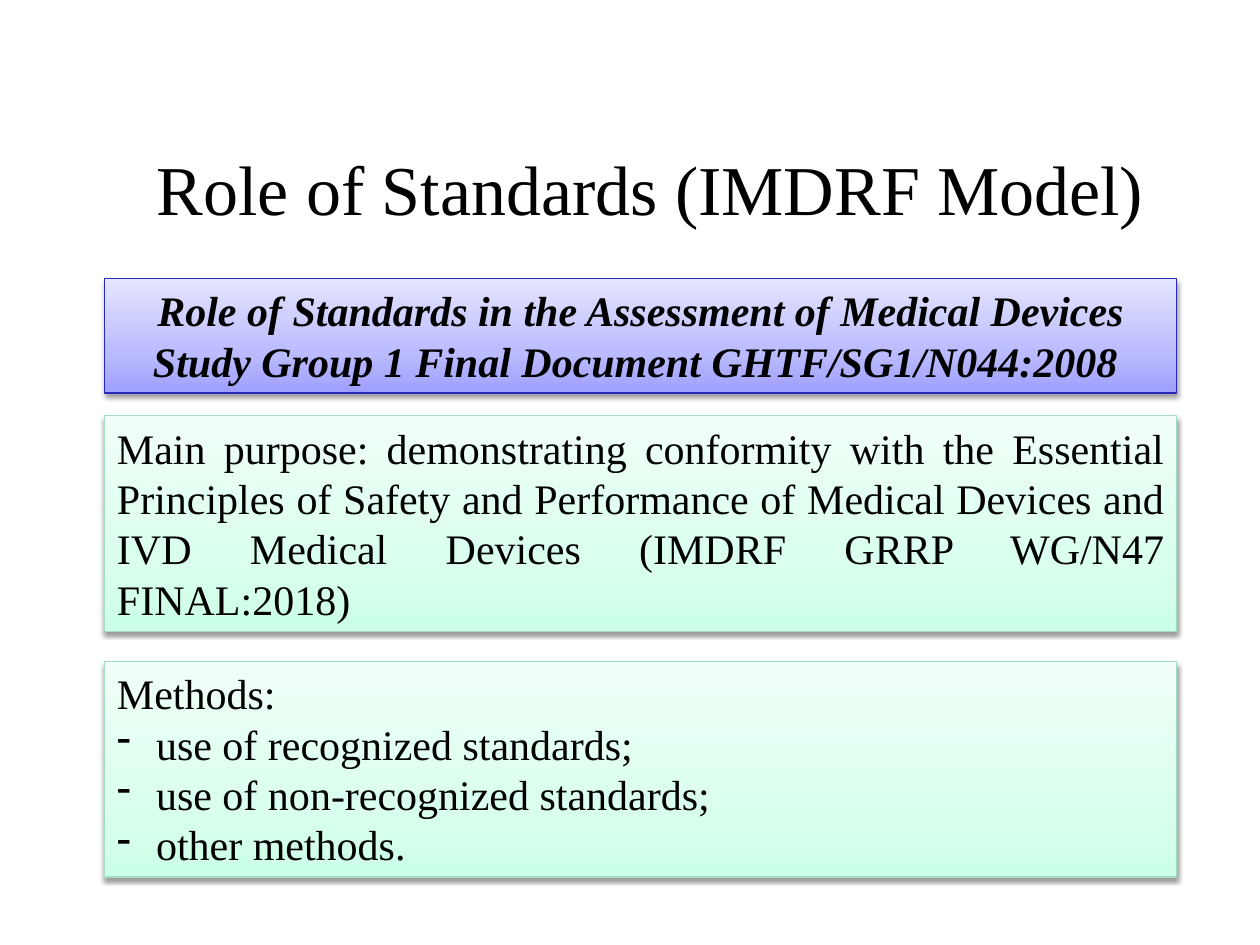
from dataclasses import dataclass

from copy import deepcopy
from lxml import etree
from pptx import Presentation
from pptx.dml.color import RGBColor
from pptx.enum.shapes import MSO_SHAPE
from pptx.enum.text import MSO_ANCHOR, PP_ALIGN
from pptx.oxml.ns import qn
from pptx.util import Inches, Pt

RECT = MSO_SHAPE.RECTANGLE
TOP, MIDDLE = MSO_ANCHOR.TOP, MSO_ANCHOR.MIDDLE
LEFT, CENTER, JUSTIFY = PP_ALIGN.LEFT, PP_ALIGN.CENTER, PP_ALIGN.JUSTIFY


@dataclass(frozen=True)
class Theme:
    font: str = "Times New Roman"
    ink: str = "000000"
    title: int = 40
    body: int = 24
    # Line colour, then fill colours from bottom to top
    blue: tuple = ("2929B8", "9F9FFF", "BBBBFF", "E5E5FF")
    mint: tuple = ("A5DEC6", "CCFFE8", "DAFFEE", "F1FFF8")


THEME = Theme()
STOPS = (0, 0.35, 1)
INDENT = Inches(0.31)


def rgb(code):
    return RGBColor.from_string(code)


def add_text(para, text, size, align, bold=None):
    para.alignment = align
    run = para.add_run()
    run.text = text
    font = run.font
    font.name, font.size = THEME.font, Pt(size)
    font.bold = font.italic = bold
    font.color.rgb = rgb(THEME.ink)


def add_dash(para):
    props = para._p.get_or_add_pPr()
    props.set("marL", str(INDENT))
    props.set("indent", str(-INDENT))
    etree.SubElement(props, qn("a:buFontTx"))
    etree.SubElement(props, qn("a:buChar"), char="-")


def set_fade(fill, colors):
    fill.gradient()
    fill.gradient_angle = 90
    # Add a middle stop to the two default ones
    stops = fill._fill._gradFill.find(qn("a:gsLst"))
    stops.insert(1, deepcopy(stops[0]))
    for stop, place, color in zip(fill.gradient_stops, STOPS, colors):
        stop.position = place
        stop.color.rgb = rgb(color)


def add_shade(shape):
    shape.shadow.inherit = False
    effects = shape._element.spPr.find(qn("a:effectLst"))
    shade = etree.SubElement(effects, qn("a:outerShdw"), blurRad=str(Pt(3.1)),
                             dist=str(Pt(1.6)), dir="5400000", rotWithShape="0")
    color = etree.SubElement(shade, qn("a:srgbClr"), val="000000")
    etree.SubElement(color, qn("a:alpha"), val="38000")


def add_title(slide, text):
    box = slide.shapes.add_textbox(Inches(0.67), Inches(0.99), Inches(8.98), Inches(1))
    frame = box.text_frame
    frame.word_wrap = True
    frame.vertical_anchor = MIDDLE
    add_text(frame.paragraphs[0], text, THEME.title, CENTER)


def add_panel(slide, top, height, colors, lines, align=LEFT, bold=None):
    """Draw a panel; every line after the first is a dash item."""
    panel = slide.shapes.add_shape(RECT, Inches(0.83), Inches(top), Inches(8.51), Inches(height))
    edge, *fade = colors
    set_fade(panel.fill, fade)
    panel.line.color.rgb = rgb(edge)
    panel.line.width = Pt(0.75)
    add_shade(panel)
    frame = panel.text_frame
    frame.word_wrap = True
    frame.vertical_anchor = TOP
    for i, line in enumerate(lines):
        para = frame.add_paragraph() if i else frame.paragraphs[0]
        if i:
            add_dash(para)
        add_text(para, line, THEME.body, align, bold)


def main():
    deck = Presentation()
    deck.slide_width, deck.slide_height = Inches(10), Inches(7.5)
    slide = deck.slides.add_slide(deck.slide_layouts[6])

    # Heading
    add_title(slide, "Role of Standards (IMDRF Model)")

    # Purpose and methods
    add_panel(slide, 3.3, 1.71, THEME.mint, [
        "Main purpose: demonstrating conformity with the Essential Principles of Safety "
        "and Performance of Medical Devices and IVD Medical Devices "
        "(IMDRF GRRP WG/N47 FINAL:2018)"], JUSTIFY)
    add_panel(slide, 5.25, 1.71, THEME.mint, [
        "Methods:", "use of recognized standards;",
        "use of non-recognized standards;", "other methods."])

    # Source document
    add_panel(slide, 2.21, 0.91, THEME.blue, [
        "Role of Standards in the Assessment of Medical Devices "
        "Study Group 1 Final Document GHTF/SG1/N044:2008 "], CENTER, True)

    deck.save("out.pptx")


if __name__ == "__main__":
    main()
